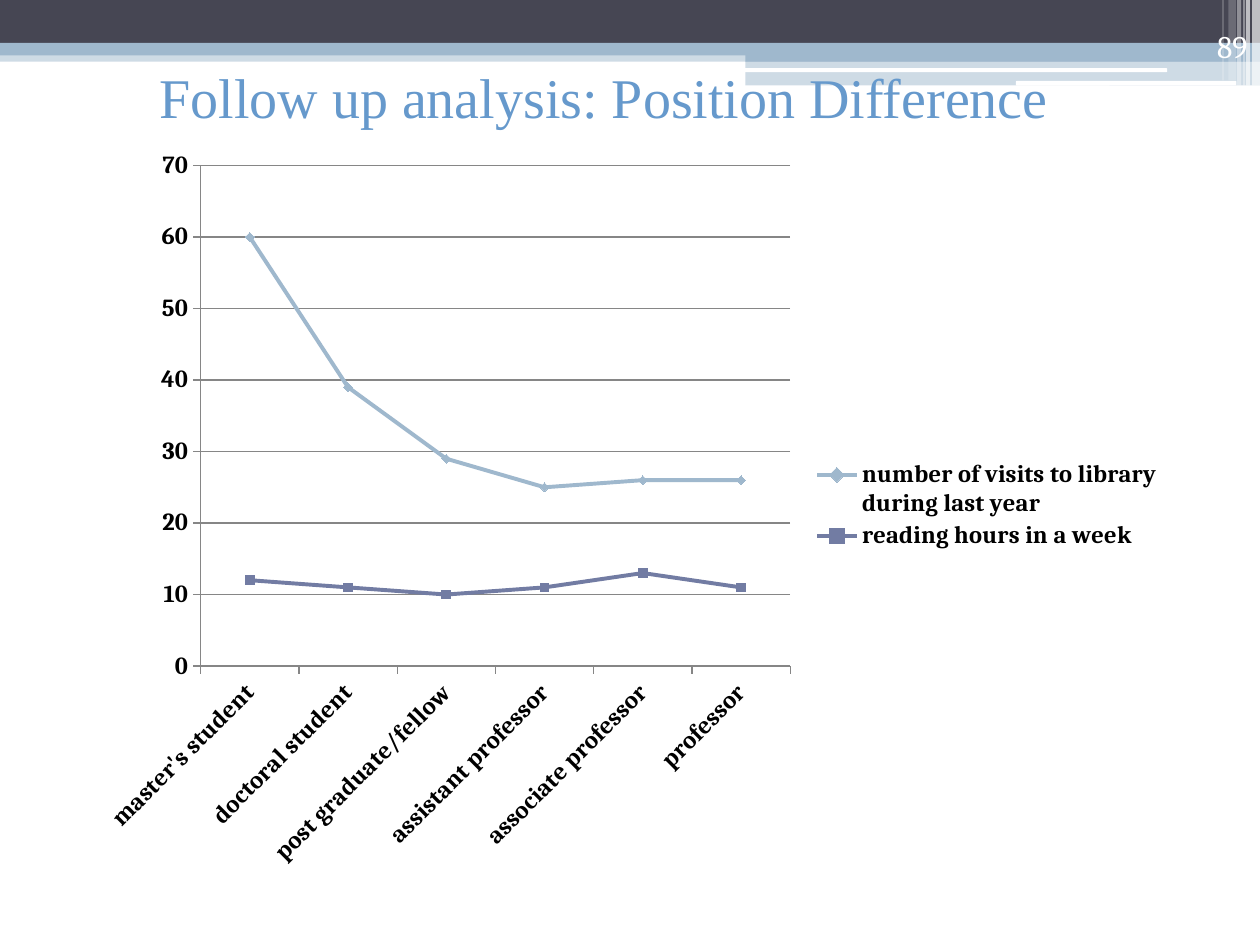
from dataclasses import dataclass

from lxml import etree
from pptx import Presentation
from pptx.chart.data import CategoryChartData
from pptx.dml.color import RGBColor
from pptx.enum.chart import XL_CHART_TYPE, XL_LEGEND_POSITION, XL_MARKER_STYLE, XL_TICK_MARK
from pptx.enum.shapes import MSO_SHAPE
from pptx.enum.text import MSO_ANCHOR, PP_ALIGN
from pptx.oxml.ns import qn
from pptx.util import Pt

RECT, ROUNDED = MSO_SHAPE.RECTANGLE, MSO_SHAPE.ROUNDED_RECTANGLE
LEFT, RIGHT = PP_ALIGN.LEFT, PP_ALIGN.RIGHT
MIDDLE, BOTTOM = MSO_ANCHOR.MIDDLE, MSO_ANCHOR.BOTTOM
DIAMOND, SQUARE = XL_MARKER_STYLE.DIAMOND, XL_MARKER_STYLE.SQUARE
LINE_CHART = XL_CHART_TYPE.LINE_MARKERS_STACKED
LEGEND_RIGHT = XL_LEGEND_POSITION.RIGHT
OUTSIDE = XL_TICK_MARK.OUTSIDE
WHITE, BLUE, DARK, GREY = "FFFFFF", "9FB8CD", "464653", "868686"


@dataclass
class Band:
    left: float
    top: float
    width: float
    height: float
    color: str
    alpha: int = 100
    shape: MSO_SHAPE = RECT


@dataclass
class Label:
    text: str
    left: float
    top: float
    width: float
    height: float
    font: str
    size: int
    color: str
    align: PP_ALIGN
    anchor: MSO_ANCHOR


@dataclass
class Series:
    name: str
    values: tuple
    color: str
    marker: XL_MARKER_STYLE


BANDS = [
    Band(0, 28.8, 720, 6.5, BLUE, 50),
    Band(0, 0, 720, 24.5, DARK),
    Band(0, 24.5, 720, 7.2, BLUE),
    Band(426, 28, 294, 7.2, BLUE),
    Band(426, 34.8, 294, 14, BLUE, 50),
    Band(425.5, 39, 241.5, 2.2, WHITE, 100, ROUNDED),
    Band(580.5, 46.3, 126, 2.6, WHITE, 100, ROUNDED),
    Band(715.5, 0, 4.5, 49, WHITE, 65),
    Band(712, 0, 2.2, 49, WHITE, 65),
    Band(710.5, 0, 0.8, 49, WHITE, 60),
    Band(707, 0, 2.2, 49, WHITE, 40),
    Band(702, 0, 4.3, 46, WHITE, 20),
    Band(698.5, 0, 0.8, 46, WHITE, 30),
]
LABELS = [
    Label("Follow up analysis: Position Difference", 84, 23.5, 672, 62.5,
          "Times New Roman", 32, "6699CC", LEFT, MIDDLE),
    Label("89", 678, 11.5, 42, 29, "Cambria", 18, WHITE, RIGHT, BOTTOM),
]
POSITIONS = ["master's student", "doctoral student", "post graduate/fellow",
             "assistant professor", "associate professor", "professor"]
SERIES = [
    Series("reading hours in a week", (12, 11, 10, 11, 13, 11), "727CA3", SQUARE),
    Series("number of visits to library during last year",
           (48, 28, 19, 14, 13, 15), BLUE, DIAMOND),
]


def rgb(color: str) -> RGBColor:
    """Turn a hex string into a colour."""
    return RGBColor.from_string(color)


def set_font(font, name: str, size: int, color: str, bold: bool = False) -> None:
    """Set the face, size, colour and weight of a font."""
    font.name, font.size, font.bold = name, Pt(size), bold
    font.color.rgb = rgb(color)


def add_band(s, band: Band) -> None:
    """Draw one plain, possibly translucent, band of the header."""
    sp = s.shapes.add_shape(band.shape, Pt(band.left), Pt(band.top),
                            Pt(band.width), Pt(band.height))
    sp.shadow.inherit = False
    sp.line.fill.background()
    sp.fill.solid()
    sp.fill.fore_color.rgb = rgb(band.color)
    if band.alpha < 100:
        clr = sp.element.spPr.find(qn("a:solidFill")).find(qn("a:srgbClr"))
        etree.SubElement(clr, qn("a:alpha"), val=str(band.alpha * 1000))


def add_label(s, label: Label) -> None:
    """Write one line of text in its own box."""
    sp = s.shapes.add_textbox(Pt(label.left), Pt(label.top), Pt(label.width), Pt(label.height))
    tf = sp.text_frame
    tf.word_wrap = True
    tf.vertical_anchor = label.anchor
    tf.text = label.text
    p = tf.paragraphs[0]
    p.alignment = label.align
    set_font(p.runs[0].font, label.font, label.size, label.color)


def set_layout(parent, index: int, inner: bool, **box: float) -> None:
    """Fix the place of a chart part as fractions of the chart."""
    for old in parent.findall(qn("c:layout")):
        parent.remove(old)
    layout = etree.Element(qn("c:layout"))
    manual = etree.SubElement(layout, qn("c:manualLayout"))
    if inner:
        etree.SubElement(manual, qn("c:layoutTarget"), val="inner")
    for mode in ("xMode", "yMode"):
        etree.SubElement(manual, qn(f"c:{mode}"), val="edge")
    for key, value in box.items():
        etree.SubElement(manual, qn(f"c:{key}"), val=str(value))
    parent.insert(index, layout)


def add_line_chart(s, left: float, top: float, width: float, height: float) -> None:
    """Add the stacked line chart of visits and reading hours."""
    data = CategoryChartData()
    data.categories = POSITIONS
    for item in SERIES:
        data.add_series(item.name, item.values)
    chart = s.shapes.add_chart(LINE_CHART, Pt(left), Pt(top), Pt(width), Pt(height), data).chart
    chart.has_title = False
    set_font(chart.font, "Cambria", 10, "000000")
    chart.has_legend = True
    chart.legend.position = LEGEND_RIGHT
    chart.legend.include_in_layout = False
    set_font(chart.legend.font, "Cambria", 14, "000000", True)

    for axis in (chart.category_axis, chart.value_axis):
        axis.major_tick_mark = OUTSIDE
        axis.format.line.color.rgb = rgb(GREY)
        set_font(axis.tick_labels.font, "Cambria", 14, "000000", True)
    values = chart.value_axis
    values.minimum_scale, values.maximum_scale, values.major_unit = 0, 70, 10
    values.has_major_gridlines = True
    values.major_gridlines.format.line.color.rgb = rgb(GREY)

    plot = chart.plots[0]
    plot.vary_by_categories = False
    for series, item in zip(plot.series, SERIES):
        series.smooth = False
        series.format.line.width = Pt(2.25)
        series.format.line.color.rgb = rgb(item.color)
        series.marker.style, series.marker.size = item.marker, 5
        series.marker.format.fill.solid()
        series.marker.format.fill.fore_color.rgb = rgb(item.color)
        series.marker.format.line.color.rgb = rgb(item.color)

    root = chart._chartSpace
    root.xpath(".//c:catAx/c:txPr/a:bodyPr")[0].set("rot", "-2700000")
    set_layout(root.xpath(".//c:plotArea")[0], 0, True, x=0.11, y=0.04, w=0.54, h=0.67)
    set_layout(root.xpath(".//c:legend")[0], 1, False, x=0.67, y=0.43, w=0.32, h=0.13)


def main() -> None:
    """Build the slide and save it."""
    prs = Presentation()
    prs.slide_width, prs.slide_height = Pt(720), Pt(540)
    s = prs.slides.add_slide(prs.slide_layouts[6])
    for band in BANDS:
        add_band(s, band)
    for label in LABELS:
        add_label(s, label)
    add_line_chart(s, 46, 77.5, 624, 427)
    prs.save("out.pptx")


if __name__ == "__main__":
    main()
